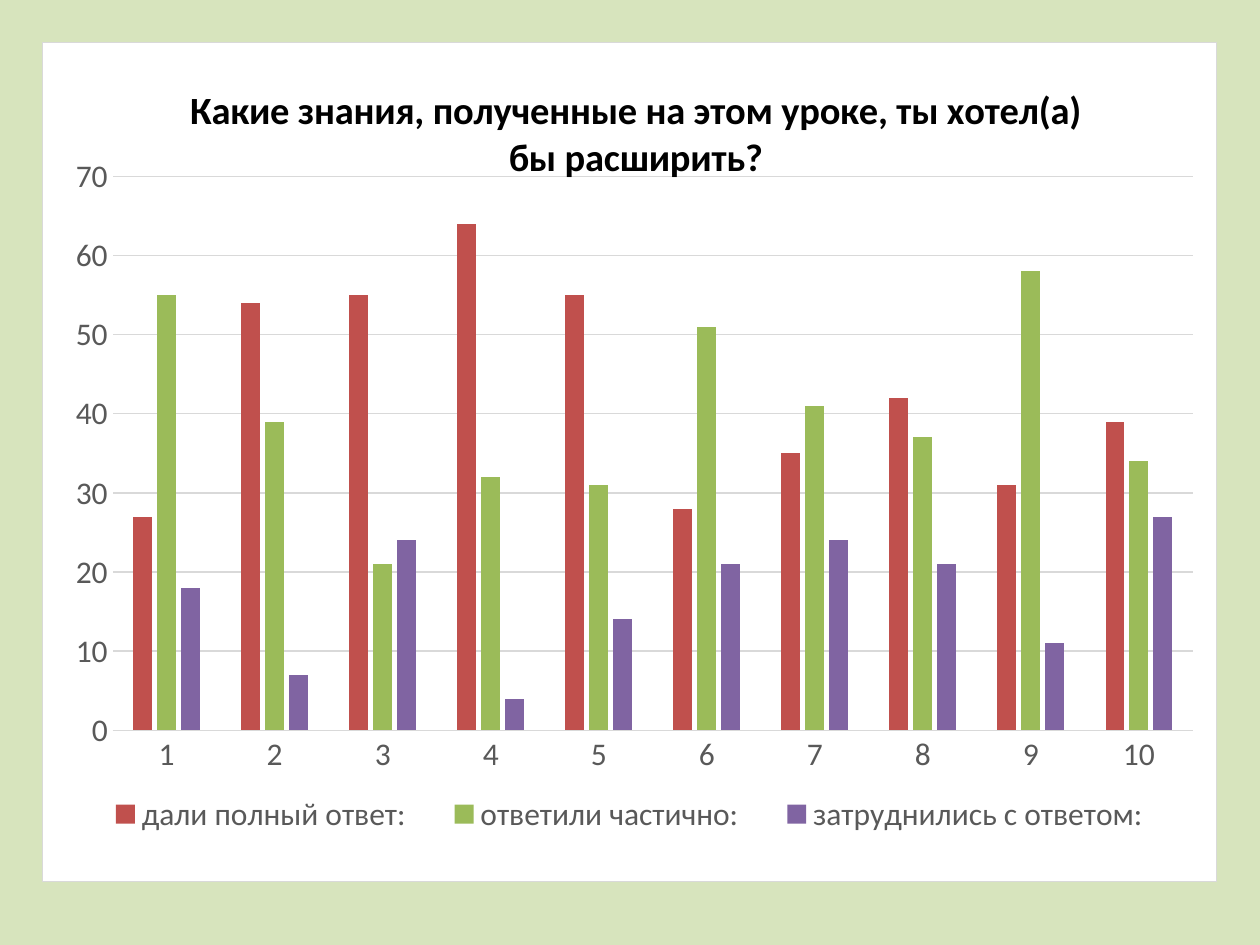
from lxml import etree
from pptx import Presentation, util as u
from pptx.chart.data import CategoryChartData
from pptx.dml.color import RGBColor
from pptx.enum import chart as ch
from pptx.oxml import parse_xml
from pptx.oxml.ns import nsdecls, qn

COLORS = {
    "background": "D7E4BD", "panel": "FFFFFF", "line": "D9D9D9",
    "title": "000000", "label": "595959",
    "full": "C0504D", "partial": "9BBB59", "none": "8064A2",
}
RGB = {name: RGBColor.from_string(value) for name, value in COLORS.items()}
ANSWERS = [
    ("дали полный ответ:", "full", (27, 54, 55, 64, 55, 28, 35, 42, 31, 39)),
    ("ответили частично:", "partial", (55, 39, 21, 32, 31, 51, 41, 37, 58, 34)),
    ("затруднились с ответом:", "none", (18, 7, 24, 4, 14, 21, 24, 21, 11, 27)),
]


def set_font(font, **values):
    values = {"name": "Calibri", "size": u.Pt(18), "bold": False, **values}
    color = values.pop("color", "label")
    for name, value in values.items():
        setattr(font, name, value)
    font.color.rgb = RGB[color]


def set_layout(parent, following, **fractions):
    """Place a chart part by fractions of the chart, before the child `following`."""
    for old in parent.findall(qn("c:layout")):
        parent.remove(old)
    layout = parse_xml(f"<c:layout {nsdecls('c')}><c:manualLayout/></c:layout>")
    manual = layout[0]
    if following == "c:barChart":
        etree.SubElement(manual, qn("c:layoutTarget")).set("val", "inner")
    for key in ("x", "y"):
        etree.SubElement(manual, qn(f"c:{key}Mode")).set("val", "edge")
    for key, value in fractions.items():
        etree.SubElement(manual, qn(f"c:{key}")).set("val", str(value))
    parent.find(qn(following)).addprevious(layout)


prs = Presentation()
prs.slide_width, prs.slide_height = u.Inches(10), u.Inches(7.5)
s = prs.slides.add_slide(prs.slide_layouts[6])
s.background.fill.solid()
s.background.fill.fore_color.rgb = RGB["background"]

data = CategoryChartData()
data.categories = [str(n) for n in range(1, 11)]
for name, _, values in ANSWERS:
    data.add_series(name, values)
chart = s.shapes.add_chart(
    ch.XL_CHART_TYPE.COLUMN_CLUSTERED,
    u.Inches(0.33), u.Inches(0.33), u.Inches(9.33), u.Inches(6.67), data,
).chart
set_font(chart.font, color="title")

# Panel behind the chart
c_chart = chart.element.find(qn("c:chart"))
c_chart.addnext(parse_xml(
    f"<c:spPr {nsdecls('c', 'a')}>"
    f'<a:solidFill><a:srgbClr val="{COLORS["panel"]}"/></a:solidFill>'
    f'<a:ln w="9525"><a:solidFill><a:srgbClr val="{COLORS["line"]}"/></a:solidFill></a:ln>'
    "</c:spPr>"
))

# Title
chart.has_title = True
p = chart.chart_title.text_frame.paragraphs[0]
r = p.add_run()
r.text = "Какие знания, полученные на этом уроке, ты хотел(а) бы расширить?"
set_font(r.font, size=u.Pt(22), bold=True, color="title")
set_layout(c_chart.find(qn("c:title")), "c:overlay", x=0.12, y=0.04)

# Columns
plot = chart.plots[0]
plot.gap_width, plot.overlap, plot.vary_by_categories = 219, -27, False
for series, (_, color, _) in zip(plot.series, ANSWERS):
    series.format.fill.solid()
    series.format.fill.fore_color.rgb = RGB[color]
set_layout(c_chart.find(qn("c:plotArea")), "c:barChart", x=0.06, y=0.16, w=0.92, h=0.66)

# Axes
for axis in (chart.category_axis, chart.value_axis):
    axis.major_tick_mark = axis.minor_tick_mark = ch.XL_TICK_MARK.NONE
    set_font(axis.tick_labels.font)
axis = chart.value_axis
axis.minimum_scale, axis.maximum_scale, axis.major_unit = 0, 70, 10
axis.has_major_gridlines = True
axis.format.line.fill.background()
for line in (axis.major_gridlines.format.line, chart.category_axis.format.line):
    line.color.rgb = RGB["line"]
    line.width = u.Pt(0.75)

# Legend
chart.has_legend = True
legend = chart.legend
legend.position = ch.XL_LEGEND_POSITION.BOTTOM
legend.include_in_layout = False
set_font(legend.font)
set_layout(c_chart.find(qn("c:legend")), "c:overlay", x=0.03, y=0.89, w=0.94, h=0.06)

prs.save("out.pptx")
